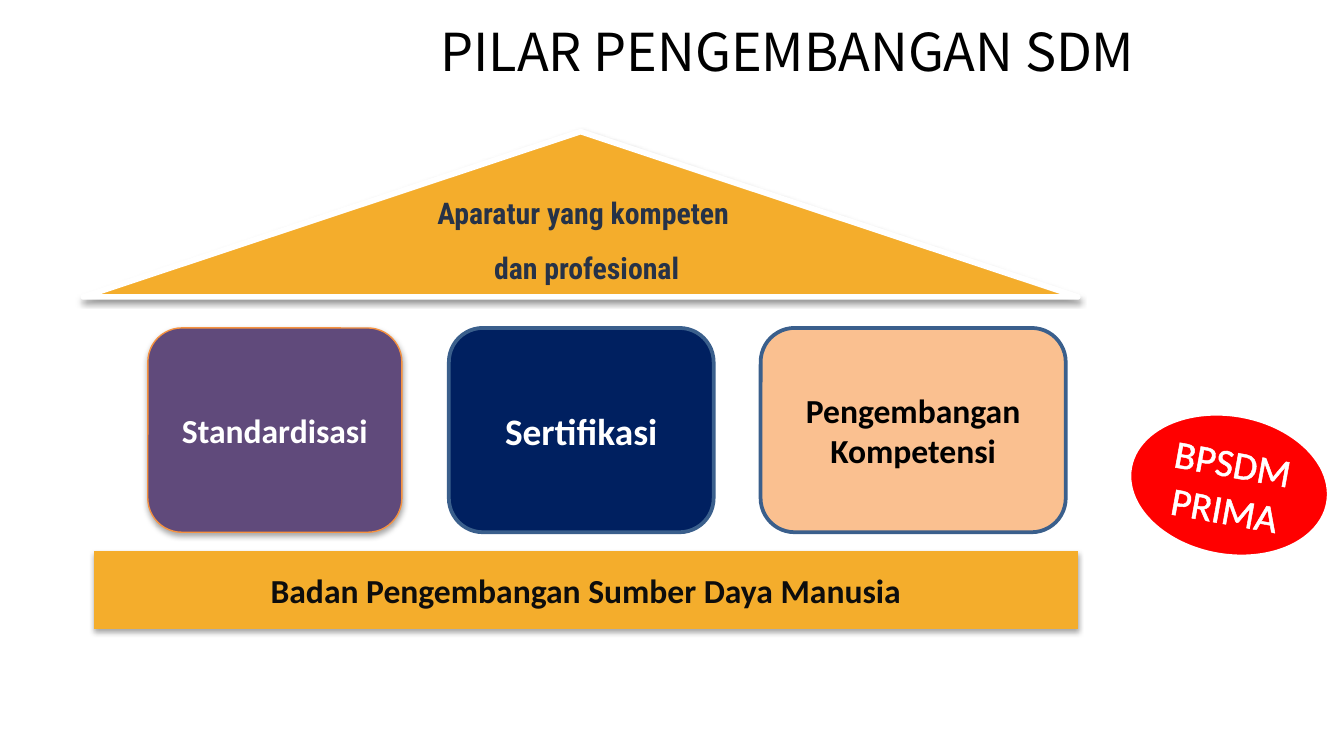
from dataclasses import dataclass
from lxml import etree
from pptx import Presentation
from pptx.dml.color import RGBColor
from pptx.enum.shapes import MSO_SHAPE
from pptx.enum.text import MSO_ANCHOR, PP_ALIGN
from pptx.oxml.ns import qn
from pptx.util import Inches, Pt

ROUND = MSO_SHAPE.ROUNDED_RECTANGLE
MIDDLE, TOP = MSO_ANCHOR.MIDDLE, MSO_ANCHOR.TOP
CENTER, RIGHT = PP_ALIGN.CENTER, PP_ALIGN.RIGHT


@dataclass
class Theme:
    gold: str = "F4AD2C"
    purple: str = "604A7B"
    orange: str = "F69240"
    navy: str = "002060"
    steel: str = "3A5F8C"
    peach: str = "FAC090"
    red: str = "FF0000"
    white: str = "FFFFFF"
    black: str = "000000"
    ink: str = "0D0D0D"
    slate: str = "263248"
    body: str = "Calibri"
    roof: str = "Roboto Condensed"
    head: str = "Noto Sans CJK SC"
    title: int = 28
    badge: int = 21
    large: int = 20
    label: int = 18
    small: int = 16


theme = Theme()
deck = Presentation()
# Wide format, 16 to 9
deck.slide_width = Inches(10)
deck.slide_height = Inches(10) * 9 // 16
slide = deck.slides.add_slide(deck.slide_layouts[5])


def add_box(kind, left, top, width, height, fill, line=None, weight=0, shade=0):
    box = slide.shapes.add_shape(
        kind, Inches(left), Inches(top), Inches(width), Inches(height))
    box.shadow.inherit = False
    box.fill.solid()
    box.fill.fore_color.rgb = RGBColor.from_string(fill)
    if line:
        box.line.color.rgb = RGBColor.from_string(line)
        box.line.width = Pt(weight)
    else:
        box.line.fill.background()
    if shade:
        effects = box._element.spPr.find(qn("a:effectLst"))
        outer = etree.SubElement(
            effects, qn("a:outerShdw"), blurRad=str(Pt(3.1)),
            dist=str(Pt(1.7)), dir="5400000", algn="ctr", rotWithShape="0")
        color = etree.SubElement(outer, qn("a:srgbClr"), val=theme.black)
        etree.SubElement(color, qn("a:alpha"), val=str(shade * 1000))
    return box


def write(box, lines, size, color, font=theme.body, bold=True,
          align=CENTER, anchor=MIDDLE):
    frame = box.text_frame
    frame.word_wrap = True
    frame.vertical_anchor = anchor
    frame.text = "\n".join(lines)
    for para in frame.paragraphs:
        para.alignment = align
        para.font.name = font
        para.font.size = Pt(size)
        para.font.bold = bold
        para.font.color.rgb = RGBColor.from_string(color)
    return frame


# Roof
add_box(MSO_SHAPE.ISOSCELES_TRIANGLE, 0.62, 0.98, 7.4, 1.23,
        theme.gold, theme.white, 3, 38)

# Pillars
pillars = [
    ("Standardisasi", 1.1, 1.89, theme.purple, theme.orange, 0.75, 35,
     theme.label, theme.white),
    ("Sertifikasi", 3.34, 1.97, theme.navy, theme.steel, 2, 0,
     theme.large, theme.white),
    ("Pengembangan Kompetensi", 5.66, 2.27, theme.peach, theme.steel, 2, 0,
     theme.label, theme.black),
]
for name, left, width, fill, line, weight, shade, size, color in pillars:
    pillar = add_box(ROUND, left, 2.44, width, 1.52, fill, line, weight, shade)
    write(pillar, [name], size, color)

# Roof text
note = slide.shapes.add_textbox(
    Inches(1.76), Inches(1.35), Inches(5.21), Inches(0.36))
frame = write(note, ["Aparatur yang kompeten ", "dan profesional"],
              theme.small, theme.slate, theme.roof, anchor=TOP)
frame.margin_top = frame.margin_bottom = Inches(0.1)
for para in frame.paragraphs:
    para.space_after = Pt(10)

# Base
base = add_box(MSO_SHAPE.RECTANGLE, 0.7, 4.1, 7.32, 0.58, theme.gold, shade=35)
write(base, ["Badan Pengembangan Sumber Daya Manusia"], theme.label, theme.ink)

# Title
title = slide.shapes.title
title.left, title.top = Inches(2.42), Inches(0)
title.width, title.height = Inches(6.12), Inches(0.67)
frame = write(title, ["PILAR PENGEMBANGAN SDM"], theme.title, theme.black,
              theme.head, False, RIGHT, TOP)
frame.paragraphs[0].line_spacing = 1.2

# Badge with outlined letters
badge = add_box(MSO_SHAPE.OVAL, 8.38, 3.07, 1.53, 1.08,
                theme.red, theme.white, 4.5)
badge.rotation = 10.2
frame = write(badge, ["BPSDM", "PRIMA"], theme.badge, theme.white, bold=False)
for para in frame.paragraphs:
    props = para._p.get_or_add_pPr()
    props.set("marL", str(Inches(0.3)))
    props.set("indent", str(Inches(-0.3)))
    edge = etree.Element(qn("a:ln"), w=str(Pt(1.45)))
    paint = etree.SubElement(edge, qn("a:solidFill"))
    etree.SubElement(paint, qn("a:srgbClr"), val=theme.white)
    para.runs[0]._r.get_or_add_rPr().insert(0, edge)

deck.save("out.pptx")
